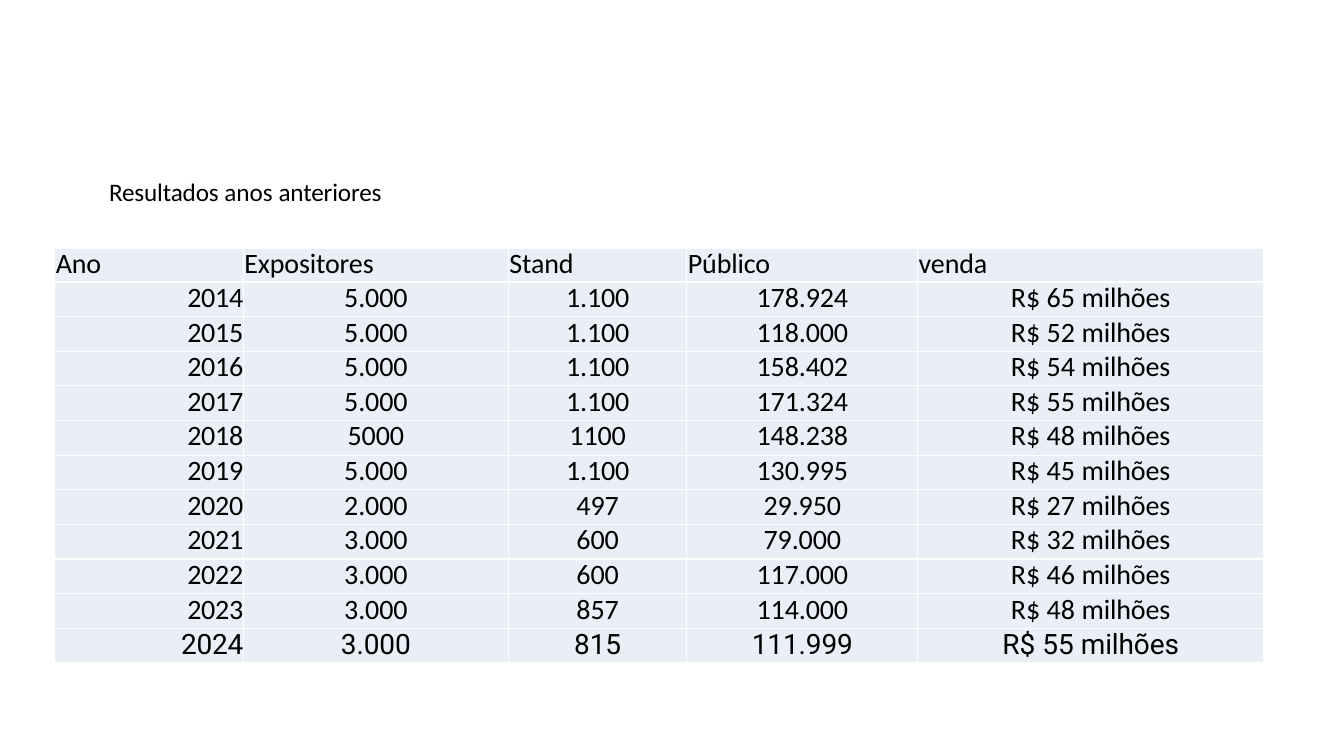
from dataclasses import dataclass

from lxml import etree
from pptx import Presentation
from pptx.dml.color import RGBColor
from pptx.enum import text
from pptx.oxml import ns
from pptx.util import Pt

COLORS = {"text": "000000", "cell": "EAEEF7", "border": "FFFFFF"}
HEADER_HEIGHT, ROW_HEIGHT = 24, 24.75
LINE_SPACING = 23.6
LEFT, CENTER, RIGHT = text.PP_ALIGN.LEFT, text.PP_ALIGN.CENTER, text.PP_ALIGN.RIGHT


@dataclass
class Column:
    title: str
    width: float
    align: text.PP_ALIGN
    spacing: float


@dataclass
class Fair:
    year: str
    exhibitors: str
    stands: str
    public: str
    sales: str
    font: str = "Calibri"


COLUMNS = [
    Column("Ano", 134.6, RIGHT, -0.2),
    Column("Expositores", 189.4, CENTER, -0.1),
    Column("Stand", 127.5, CENTER, -0.1),
    Column("Público", 164.9, CENTER, -0.1),
    Column("venda", 247, CENTER, -0.1),
]

FAIRS = [
    Fair("2014", "5.000", "1.100", "178.924", "R$ 65 "),
    Fair("2015", "5.000", "1.100", "118.000", "R$ 52 "),
    Fair("2016", "5.000", "1.100", "158.402", "R$ 54 "),
    Fair("2017", "5.000", "1.100", "171.324", "R$ 55 "),
    Fair("2018", "5000", "1100", "148.238", "R$ 48 "),
    Fair("2019", "5.000", "1.100", "130.995", "R$ 45 "),
    Fair("2020", "2.000", "497", "29.950", "R$ 27 "),
    Fair("2021", "3.000", "600", "79.000", "R$ 32 "),
    Fair("2022", "3.000", "600", "117.000", "R$ 46 "),
    Fair("2023", "3.000", "857", "114.000", "R$ 48 "),
    Fair("2024", "3.000", "815", "111.999", "R$ 55 ", "Roboto"),
]


def add_run(p, words: str, size: float, spacing: float, font: str = "Calibri") -> None:
    """Add a run; spacing is the letter spacing in points."""
    r = p.add_run()
    r.text = words
    r.font.size = Pt(size)
    r.font.name = font
    r.font.color.rgb = RGBColor.from_string(COLORS["text"])
    r.font._element.set("spc", str(round(spacing * 100)))


def set_margins(box, left: float = 0, top: float = 0) -> None:
    box.margin_left, box.margin_top = Pt(left), Pt(top)
    box.margin_right = box.margin_bottom = Pt(0)


def add_borders(cell) -> None:
    tc_pr = cell._tc.get_or_add_tcPr()
    for side in ("lnL", "lnR", "lnT", "lnB"):
        ln = etree.SubElement(tc_pr, ns.qn(f"a:{side}"), w=str(Pt(1)))
        fill = etree.SubElement(ln, ns.qn("a:solidFill"))
        etree.SubElement(fill, ns.qn("a:srgbClr"), val=COLORS["border"])


def prepare_cell(cell, align: text.PP_ALIGN, left: float = 0):
    """Style a cell and return its paragraph."""
    set_margins(cell, left)
    add_borders(cell)
    cell.fill.solid()
    cell.fill.fore_color.rgb = RGBColor.from_string(COLORS["cell"])
    p = cell.text_frame.paragraphs[0]
    p.alignment = align
    p.line_spacing = Pt(LINE_SPACING)
    return p


def add_results(slide) -> None:
    width = sum(column.width for column in COLUMNS)
    height = HEADER_HEIGHT + ROW_HEIGHT * len(FAIRS)
    table = slide.shapes.add_table(len(FAIRS) + 1, len(COLUMNS), Pt(39.2), Pt(177.4),
                                   Pt(width), Pt(height)).table
    table.first_row = table.horz_banding = False
    table.rows[0].height = Pt(HEADER_HEIGHT)
    for c, column in enumerate(COLUMNS):
        table.columns[c].width = Pt(column.width)
        p = prepare_cell(table.cell(0, c), LEFT, 0.7)
        add_run(p, column.title, 20, column.spacing)

    for row, fair in enumerate(FAIRS, start=1):
        table.rows[row].height = Pt(ROW_HEIGHT)
        values = (fair.year, fair.exhibitors, fair.stands, fair.public)
        for c, (column, value) in enumerate(zip(COLUMNS, values)):
            p = prepare_cell(table.cell(row, c), column.align)
            add_run(p, value, 20, column.spacing, fair.font)
        sales = COLUMNS[-1]
        p = prepare_cell(table.cell(row, len(COLUMNS) - 1), sales.align)
        add_run(p, fair.sales, 20, 0, fair.font)
        add_run(p, "milhões", 20, sales.spacing, fair.font)


def add_heading(slide) -> None:
    tf = slide.shapes.add_textbox(Pt(77), Pt(124.8), Pt(198.7), Pt(23.8)).text_frame
    tf.word_wrap = True
    set_margins(tf, 0.9, 1)
    p = tf.paragraphs[0]
    for words, spacing in (("Resultados ", -0.1), ("anos ", 0), ("anteriores", -0.1)):
        add_run(p, words, 18, spacing)


def main() -> None:
    prs = Presentation()
    prs.slide_width, prs.slide_height = Pt(960), Pt(540)
    slide = prs.slides.add_slide(prs.slide_layouts[6])
    add_results(slide)
    add_heading(slide)
    prs.save("out.pptx")


if __name__ == "__main__":
    main()
